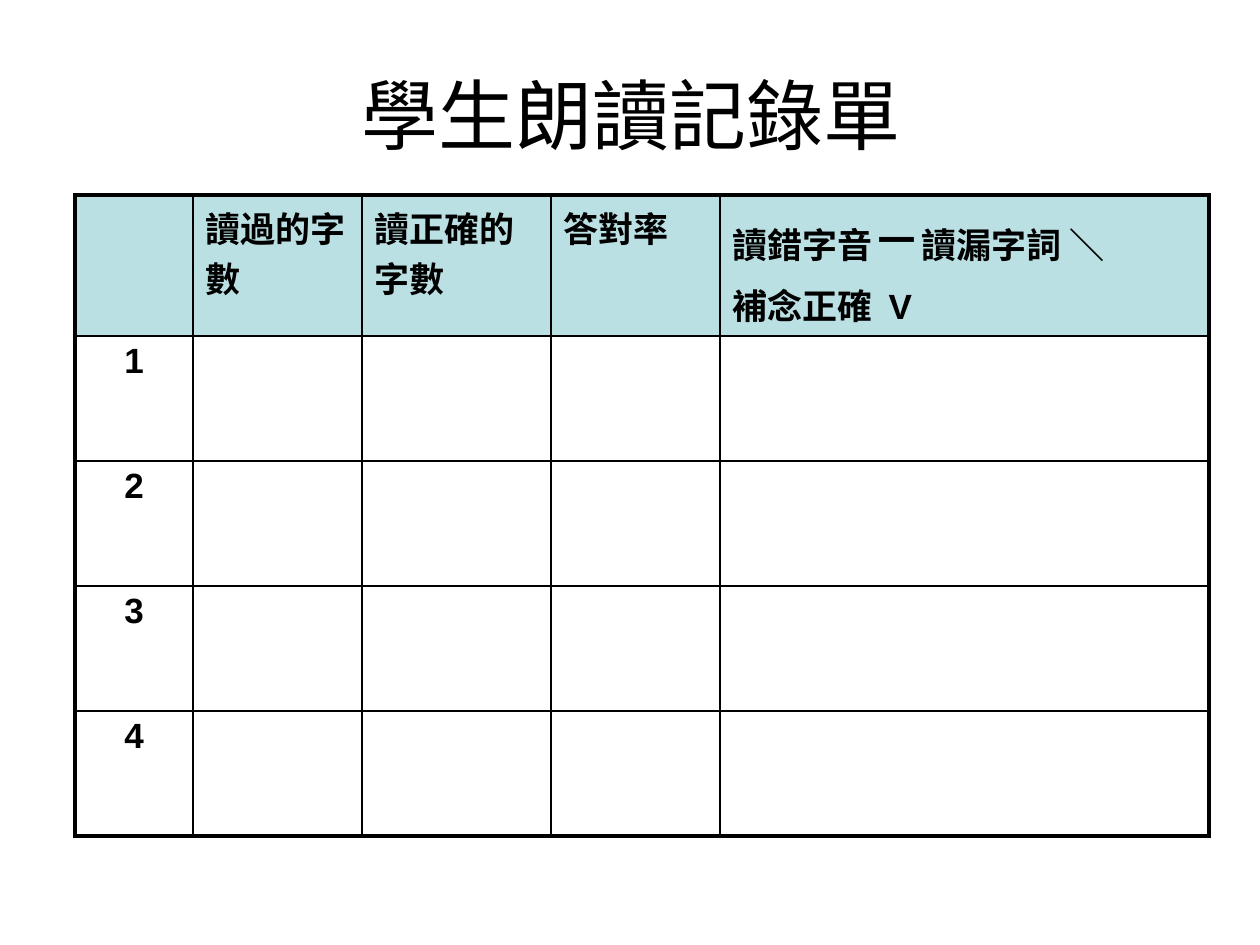
from dataclasses import dataclass

from lxml import etree
from pptx import Presentation
from pptx.dml.color import RGBColor
from pptx.enum.text import MSO_ANCHOR, PP_ALIGN
from pptx.oxml.ns import qn
from pptx.util import Emu, Pt

LEFT, CENTER = PP_ALIGN.LEFT, PP_ALIGN.CENTER
TOP, MIDDLE = MSO_ANCHOR.TOP, MSO_ANCHOR.MIDDLE
PX_PER_INCH = 126


@dataclass(frozen=True)
class Theme:
    font: str = "Arial"
    ink: str = "000000"
    header_fill: str = "BBE0E3"
    title_size: int = 44
    mark_size: int = 28
    cell_size: int = 20
    paragraph_gap: int = 4
    inner_line: float = 1
    outer_line: float = 2.25


@dataclass(frozen=True)
class Span:
    text: str
    size: int


THEME = Theme()

# Record sheet: each heading is a list of lines, each line a list of spans
SIZE = THEME.cell_size
HEADINGS = [
    [],
    [[Span("讀過的字數", SIZE)]],
    [[Span("讀正確的字數", SIZE)]],
    [[Span("答對率", SIZE)]],
    [
        [Span("讀錯字音", SIZE), Span("－", THEME.mark_size), Span("讀漏字詞 ＼", SIZE)],
        [Span("補念正確  V", SIZE)],
    ],
]
READING_COUNT = 4
COLUMN_WIDTHS = [118, 169, 189, 169, 489]
HEADER_HEIGHT, READING_HEIGHT = 141, 125


def px(length: int) -> Emu:
    return Emu(round(length * 914400 / PX_PER_INCH))


def write_text(frame, lines: list[list[Span]], *, align=LEFT, bold: bool = False,
               gap: float = 0) -> None:
    for index, spans in enumerate(lines):
        paragraph = frame.add_paragraph() if index else frame.paragraphs[0]
        paragraph.alignment = align
        paragraph.space_before = Pt(gap)
        for span in spans:
            run = paragraph.add_run()
            run.text = span.text
            run.font.name = THEME.font
            run.font.size = Pt(span.size)
            run.font.bold = bold
            run.font.color.rgb = RGBColor.from_string(THEME.ink)


def draw_borders(cell, outer_sides: dict[str, bool]) -> None:
    properties = cell._tc.get_or_add_tcPr()
    for side, is_outer in outer_sides.items():
        width = THEME.outer_line if is_outer else THEME.inner_line
        line = etree.SubElement(properties, qn(f"a:ln{side}"), w=str(Pt(width)))
        fill = etree.SubElement(line, qn("a:solidFill"))
        etree.SubElement(fill, qn("a:srgbClr"), val=THEME.ink)


def draw_title(slide, text: str) -> None:
    title = slide.shapes.add_textbox(px(64), px(35), px(1134), px(158))
    title.text_frame.word_wrap = True
    title.text_frame.vertical_anchor = MIDDLE
    write_text(title.text_frame, [[Span(text, THEME.title_size)]], align=CENTER)


def draw_record_sheet(slide) -> None:
    heights = [HEADER_HEIGHT] + [READING_HEIGHT] * READING_COUNT
    last_row, last_column = len(heights) - 1, len(COLUMN_WIDTHS) - 1
    sheet = slide.shapes.add_table(
        len(heights), len(COLUMN_WIDTHS), px(75), px(195),
        px(sum(COLUMN_WIDTHS)), px(sum(heights))).table
    sheet.first_row = sheet.horz_banding = False

    for column, width in zip(sheet.columns, COLUMN_WIDTHS):
        column.width = px(width)
    for row, height in zip(sheet.rows, heights):
        row.height = px(height)

    # Heavy frame outside, thin grid inside, tinted header
    for r in range(len(heights)):
        for c in range(len(COLUMN_WIDTHS)):
            cell = sheet.cell(r, c)
            cell.vertical_anchor = TOP
            draw_borders(cell, {"L": c == 0, "R": c == last_column,
                                "T": r == 0, "B": r == last_row})
            if r == 0:
                cell.fill.solid()
                cell.fill.fore_color.rgb = RGBColor.from_string(THEME.header_fill)
            else:
                cell.fill.background()

    # Headings, then the reading numbers down the first column
    for c, heading in enumerate(HEADINGS):
        write_text(sheet.cell(0, c).text_frame, heading, bold=True,
                   gap=THEME.paragraph_gap)
    for number in range(1, READING_COUNT + 1):
        write_text(sheet.cell(number, 0).text_frame, [[Span(str(number), SIZE)]],
                   align=CENTER, bold=True, gap=THEME.paragraph_gap)


def main() -> None:
    deck = Presentation()
    deck.slide_width, deck.slide_height = px(1260), px(945)
    slide = deck.slides.add_slide(deck.slide_layouts[6])
    draw_title(slide, "學生朗讀記錄單")
    draw_record_sheet(slide)
    deck.save("out.pptx")


if __name__ == "__main__":
    main()
